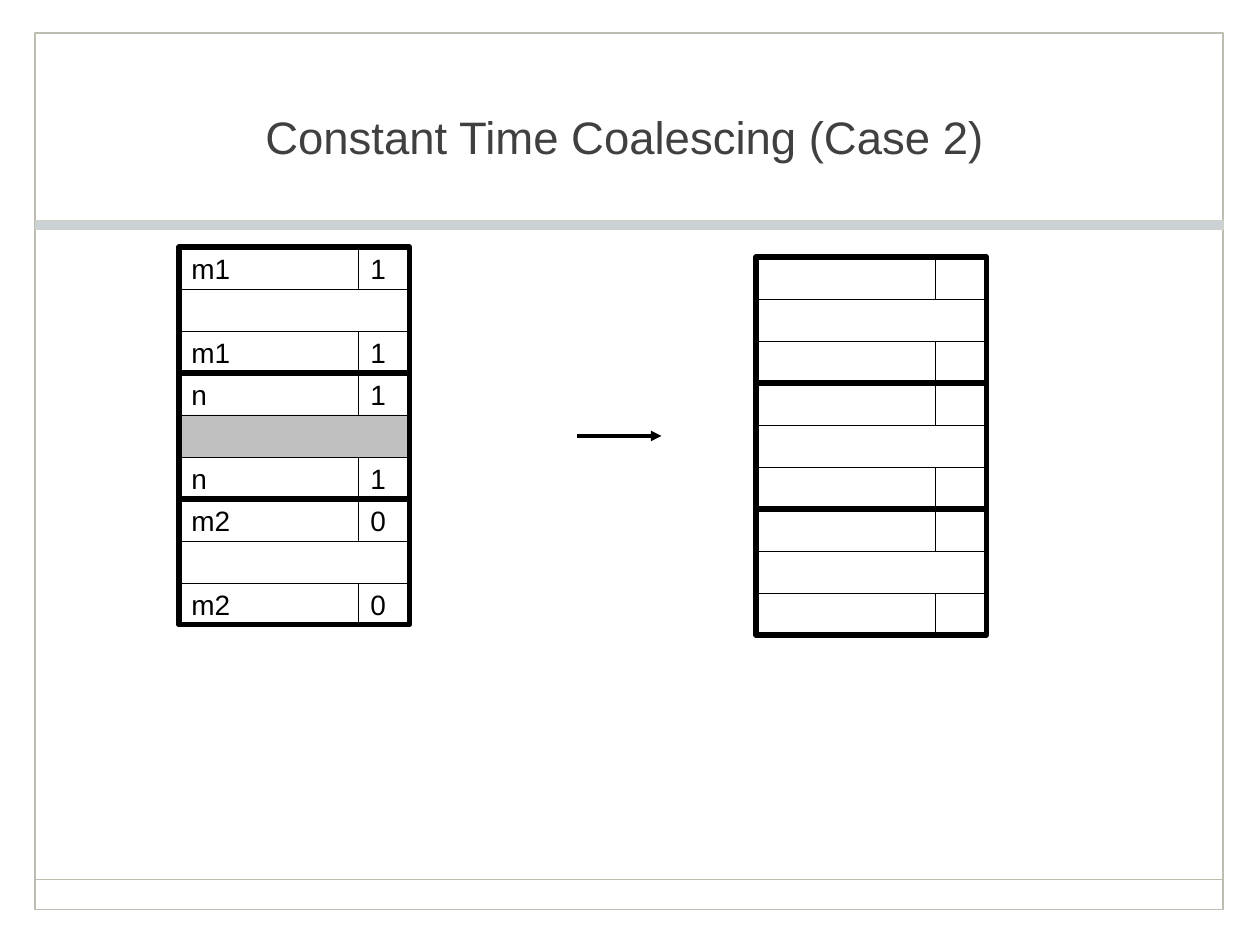
from lxml import etree
from pptx import Presentation
from pptx.dml.color import RGBColor
from pptx.enum.shapes import MSO_CONNECTOR as CONNECTOR, MSO_SHAPE as SHAPE
from pptx.enum.text import MSO_ANCHOR as ANCHOR, PP_ALIGN as ALIGN
from pptx.oxml.ns import qn
from pptx.util import Inches, Pt

COLORS = {
    "black": "000000",
    "white": "FFFFFF",
    "gray": "C0C0C0",
    "title": "404040",
    "frame": "BEBDB2",
    "band": "CBD2D5",
    "band_edge": "D1D0C8",
}
FONT = "Arial"
BLOCK_WIDTH, BLOCK_HEIGHT = 1.83, 1
LABEL_WIDTH = 1.42
ROW_HEIGHT = BLOCK_HEIGHT / 3


def color(name):
    """Return a named color."""
    return RGBColor.from_string(COLORS[name])


def style_text(frame, size, name, align):
    """Format the single paragraph of a text frame."""
    frame.word_wrap = True
    frame.vertical_anchor = ANCHOR.MIDDLE
    para = frame.paragraphs[0]
    para.alignment = align
    para.font.name = FONT
    para.font.size = Pt(size)
    para.font.color.rgb = color(name)


def add_box(page, left, top, width, height, fill=None, line="black", weight=0.25, text=""):
    """Add a rectangle, with left-aligned text if any is given."""
    box = page.shapes.add_shape(
        SHAPE.RECTANGLE, Inches(left), Inches(top), Inches(width), Inches(height))
    box.shadow.inherit = False
    if fill:
        box.fill.solid()
        box.fill.fore_color.rgb = color(fill)
    else:
        box.fill.background()
    box.line.color.rgb = color(line)
    box.line.width = Pt(weight)
    if text:
        box.text_frame.text = text
        style_text(box.text_frame, 16, "black", ALIGN.LEFT)


def add_line(page, left, right, top, name, weight, arrow=False):
    """Add a horizontal line, optionally ending in an arrowhead."""
    line = page.shapes.add_connector(
        CONNECTOR.STRAIGHT, Inches(left), Inches(top), Inches(right), Inches(top))
    line.line.color.rgb = color(name)
    line.line.width = Pt(weight)
    if arrow:
        etree.SubElement(line.line._get_or_add_ln(), qn("a:tailEnd"), type="triangle")
    etree.SubElement(line._element.spPr, qn("a:effectLst"))


def add_frame(page, left, top, width, height):
    """Add the page border, the footer rule and the band below the title."""
    add_box(page, left, top, width, height, line="frame", weight=1)
    add_line(page, left, left + width, 6.98, "frame", 1)
    add_box(page, left, 1.75, width, 0.07, "band", "band_edge")


def add_title(page, left, top, width, height):
    """Place and format the slide title."""
    title = page.shapes.title
    title.left, title.top = Inches(left), Inches(top)
    title.width, title.height = Inches(width), Inches(height)
    title.text_frame.text = "Constant Time Coalescing (Case 2)"
    style_text(title.text_frame, 26, "title", ALIGN.CENTER)


def add_block(page, left, top, size="", flag="", body="white"):
    """Add a memory block with matching header and footer rows around its body."""
    for row_top in (top, top + 2 * ROW_HEIGHT):
        add_box(page, left, row_top, LABEL_WIDTH, ROW_HEIGHT, "white", text=size)
        add_box(page, left + LABEL_WIDTH, row_top, BLOCK_WIDTH - LABEL_WIDTH,
                ROW_HEIGHT, "white", text=flag)
    add_box(page, left, top + ROW_HEIGHT, BLOCK_WIDTH, ROW_HEIGHT, body)
    add_box(page, left, top, BLOCK_WIDTH, BLOCK_HEIGHT, weight=3)


def add_heap(page, left, top, blocks):
    """Stack memory blocks from the top down."""
    for index, block in enumerate(blocks):
        add_block(page, left, top + index * BLOCK_HEIGHT, *block)


def main():
    """Build the slide and save the deck."""
    deck = Presentation()
    deck.slide_width, deck.slide_height = Inches(10), Inches(7.5)
    page = deck.slides.add_slide(deck.slide_layouts[5])
    add_frame(page, 0.28, 0.26, 9.43, 6.96)
    add_title(page, 0.42, 0.77, 9.08, 0.63)
    add_heap(page, 1.42, 1.96, [("m1", "1"), ("n", "1", "gray"), ("m2", "0")])
    add_line(page, 4.58, 5.25, 3.46, "black", 2, arrow=True)
    add_heap(page, 6, 2.04, [()] * 3)
    deck.save("out.pptx")


if __name__ == "__main__":
    main()
